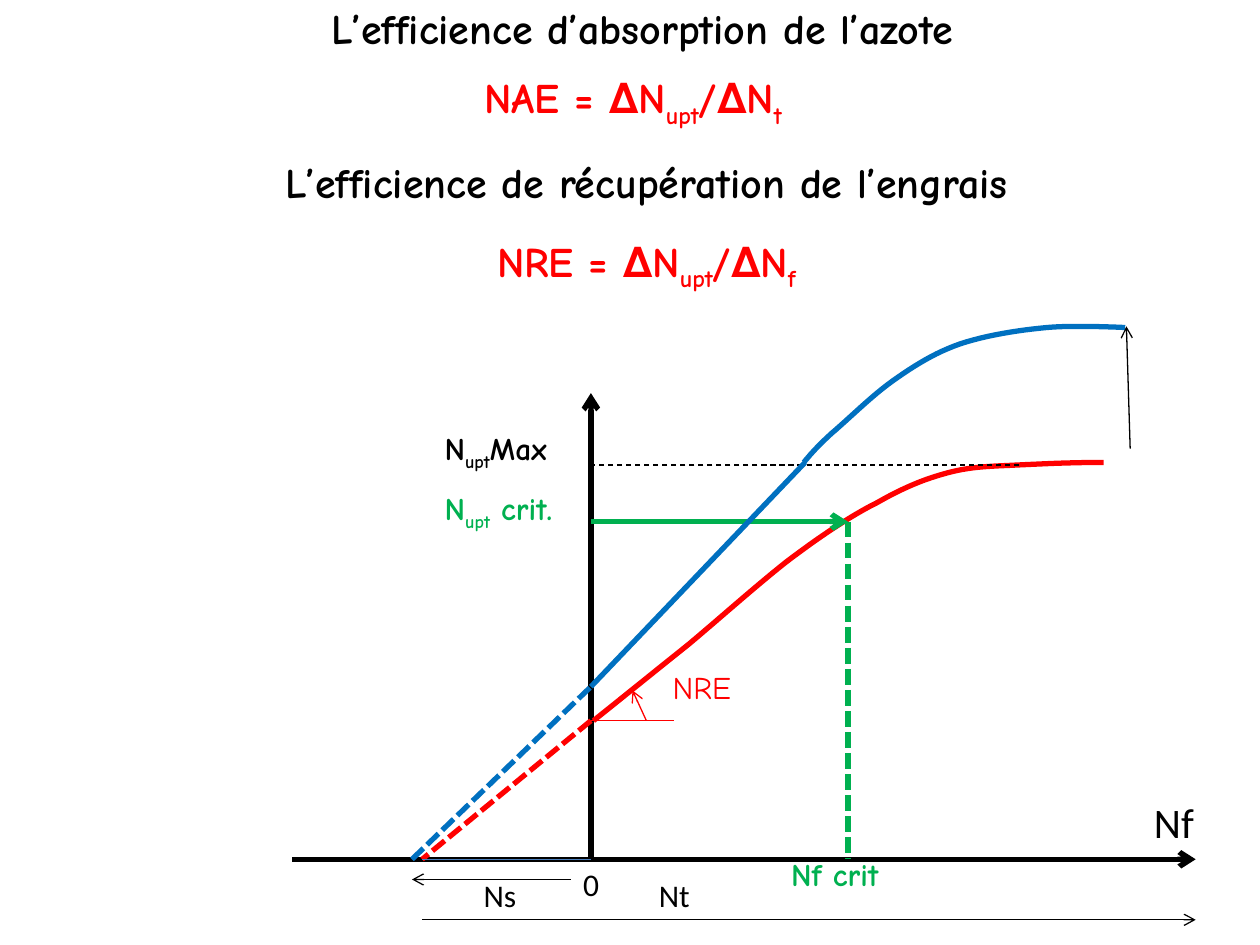
from dataclasses import dataclass
from typing import Optional

import pptx
import pptx.dml.color
import pptx.enum.dml
import pptx.enum.shapes
import pptx.enum.text
import pptx.util
from pptx.util import Inches

RGBColor = pptx.dml.color.RGBColor
Dash = pptx.enum.dml.MSO_LINE
Align = pptx.enum.text.PP_ALIGN

BLACK = RGBColor(0x00, 0x00, 0x00)
RED = RGBColor(0xFF, 0x00, 0x00)
GREEN = RGBColor(0x00, 0xB0, 0x50)
BLUE = RGBColor(0x00, 0x70, 0xC0)
STEEL = RGBColor(0x4B, 0x7E, 0xBC)
COMIC, CALIBRI = "Comic Neue", "Calibri"
THICK, THIN = 3, 0.75
CURVE_STEPS = 12

ORIGIN_X, AXIS_Y, AXIS_END = 4.69, 6.82, 9.49
RED_Y0, BLUE_Y0 = 5.72, 5.45  # where each curve crosses the vertical axis
RED_X0, BLUE_X0 = 3.35, 3.27  # where each extension meets the horizontal axis
MAX_Y = 3.69
CRIT_X, CRIT_Y = 6.73, 4.14


@dataclass
class Line:
    start: tuple[float, float]
    end: tuple[float, float]
    color: RGBColor = BLACK
    width: float = THIN
    arrow: bool = False
    dash: Optional[Dash] = None


@dataclass
class Curve:
    """Cubic segments: the start point, then three points for each segment."""
    points: list[tuple[float, float]]
    color: RGBColor


@dataclass
class Label:
    """Lines of (text, colour); parts between underscores are subscripts."""
    box: tuple[float, float, float, float]
    lines: list[tuple[str, RGBColor]]
    size: int = 18
    font: str = COMIC
    bold: bool = True
    align: Optional[Align] = None
    spacing: Optional[float] = None


def draw_line(s, line: Line) -> None:
    sp = s.shapes.add_connector(
        pptx.enum.shapes.MSO_CONNECTOR.STRAIGHT,
        *(Inches(v) for v in line.start + line.end))
    sp.line.color.rgb = line.color
    sp.line.width = pptx.util.Pt(line.width)
    if line.dash:
        sp.line.dash_style = line.dash
    if line.arrow:
        tail = pptx.oxml.xmlchemy.OxmlElement("a:tailEnd")
        tail.set("type", "arrow")
        sp.line._get_or_add_ln().append(tail)
    sp._element.spPr.append(pptx.oxml.xmlchemy.OxmlElement("a:effectLst"))


def sample(points: list[tuple[float, float]]) -> list[tuple[float, float]]:
    """Points along the cubic segments."""
    result = [points[0]]
    for i in range(0, len(points) - 1, 3):
        a, b, c, d = points[i:i + 4]
        for step in range(1, CURVE_STEPS + 1):
            t = step / CURVE_STEPS
            u = 1 - t
            weights = (u ** 3, 3 * u * u * t, 3 * u * t * t, t ** 3)
            result.append(tuple(
                sum(w * p[axis] for w, p in zip(weights, (a, b, c, d)))
                for axis in (0, 1)))
    return result


def draw_curve(s, curve: Curve) -> None:
    start, *rest = [(Inches(x), Inches(y)) for x, y in sample(curve.points)]
    builder = s.shapes.build_freeform(*start)
    builder.add_line_segments(rest, close=False)
    sp = builder.convert_to_shape()
    sp.shadow.inherit = False
    sp.fill.background()
    sp.line.color.rgb = curve.color
    sp.line.width = pptx.util.Pt(THICK)


def draw_label(s, label: Label) -> None:
    tf = s.shapes.add_textbox(*(Inches(v) for v in label.box)).text_frame
    tf.word_wrap = False
    tf.auto_size = pptx.enum.text.MSO_AUTO_SIZE.SHAPE_TO_FIT_TEXT
    for i, (text, color) in enumerate(label.lines):
        p = tf.add_paragraph() if i else tf.paragraphs[0]
        p.alignment = label.align
        p.line_spacing = label.spacing
        p.font.name = label.font
        p.font.size = pptx.util.Pt(label.size)
        p.font.bold = label.bold
        p.font.color.rgb = color
        for j, part in enumerate(text.split("_")):
            if part:
                r = p.add_run()
                r.text = part
                if j % 2:
                    r._r.get_or_add_rPr().set("baseline", "-25000")


def plain(text: str, x: float, y: float, w: float, h: float = 0.4, size: int = 18) -> Label:
    return Label((x, y, w, h), [(text, BLACK)], size, CALIBRI, False)


ITEMS = [
    Label((2.14, -0.03, 5.91, 0.5), [("L’efficience d’absorption de l’azote", BLACK)],
          24, align=Align.CENTER),
    Label((3.46, 0.52, 3.13, 0.5), [("NAE = ∆N_upt_/∆N_t", RED)], 24, align=Align.CENTER),
    Label((1.74, 0.99, 6.78, 1.31),
          [("L’efficience de récupération de l’engrais", BLACK),
           ("NRE = ∆N_upt_/∆N_f", RED)],
          24, align=Align.CENTER, spacing=1.5),
    Line((2.32, AXIS_Y), (AXIS_END, AXIS_Y), BLACK, THICK, True),
    Line((ORIGIN_X, AXIS_Y), (ORIGIN_X, 3.12), BLACK, THICK, True),
    Curve([(4.71, RED_Y0), (4.96, 5.52), (5.22, 5.31), (5.47, 5.11),
           (5.72, 4.9), (6, 4.65), (6.24, 4.46),
           (6.49, 4.27), (6.74, 4.1), (6.96, 3.99),
           (7.17, 3.87), (7.34, 3.8), (7.53, 3.75),
           (7.72, 3.7), (7.89, 3.7), (8.09, MAX_Y),
           (8.29, 3.68), (8.52, 3.67), (8.76, 3.67)], RED),
    Line((ORIGIN_X, RED_Y0), (RED_X0, AXIS_Y), RED, THICK, dash=Dash.SQUARE_DOT),
    Line((8.09, MAX_Y), (ORIGIN_X, MAX_Y), dash=Dash.DASH),
    Label((3.43, 3.36, 1.17, 0.4), [("N_upt_Max", BLACK)]),
    Line((ORIGIN_X, CRIT_Y), (CRIT_X, CRIT_Y), GREEN, THICK, True),
    Label((3.43, 3.83, 1.32, 0.4), [("N_upt_ crit.", GREEN)]),
    Line((CRIT_X, CRIT_Y), (CRIT_X, AXIS_Y), GREEN, THICK, dash=Dash.SQUARE_DOT),
    Line((4.53, 6.98), (BLUE_X0, 6.98), arrow=True),
    plain("0", 4.53, 6.82, 0.33),
    plain("Ns", 3.74, 6.9, 0.46),
    Line((RED_X0, 7.3), (AXIS_END, 7.3), arrow=True),
    plain("Nt", 5.13, 6.9, 0.45),
    plain("Nf", 9.06, 6.27, 0.52, 0.5, 24),
    Label((6.18, 6.74, 1.08, 0.4), [("Nf crit", GREEN)]),
    Line((ORIGIN_X, RED_Y0), (5.35, RED_Y0), RED),
    Line((5.13, RED_Y0), (5.02, 5.48), RED, arrow=True),
    Label((5.24, 5.25, 0.72, 0.4), [("NRE", RED)], bold=False),
    Line((RED_X0, AXIS_Y), (ORIGIN_X, AXIS_Y), STEEL),
    Line((ORIGIN_X, BLUE_Y0), (6.39, 3.67), BLUE, THICK),
    Curve([(6.38, 3.67), (6.43, 3.61), (6.48, 3.55), (6.6, 3.44),
           (6.72, 3.34), (6.92, 3.14), (7.09, 3.02),
           (7.26, 2.9), (7.42, 2.8), (7.62, 2.73),
           (7.83, 2.66), (8.09, 2.62), (8.31, 2.6),
           (8.53, 2.58), (8.93, 2.6), (8.93, 2.6)], BLUE),
    Line((BLUE_X0, AXIS_Y), (ORIGIN_X, BLUE_Y0), BLUE, THICK, dash=Dash.SQUARE_DOT),
    Line((8.97, 3.56), (8.94, 2.59), arrow=True),
]
DRAW = {Line: draw_line, Curve: draw_curve, Label: draw_label}


def main() -> None:
    prs = pptx.Presentation()
    prs.slide_width, prs.slide_height = Inches(10), Inches(7.5)
    s = prs.slides.add_slide(prs.slide_layouts[6])
    for item in ITEMS:
        DRAW[type(item)](s, item)
    prs.save("out.pptx")


if __name__ == "__main__":
    main()
